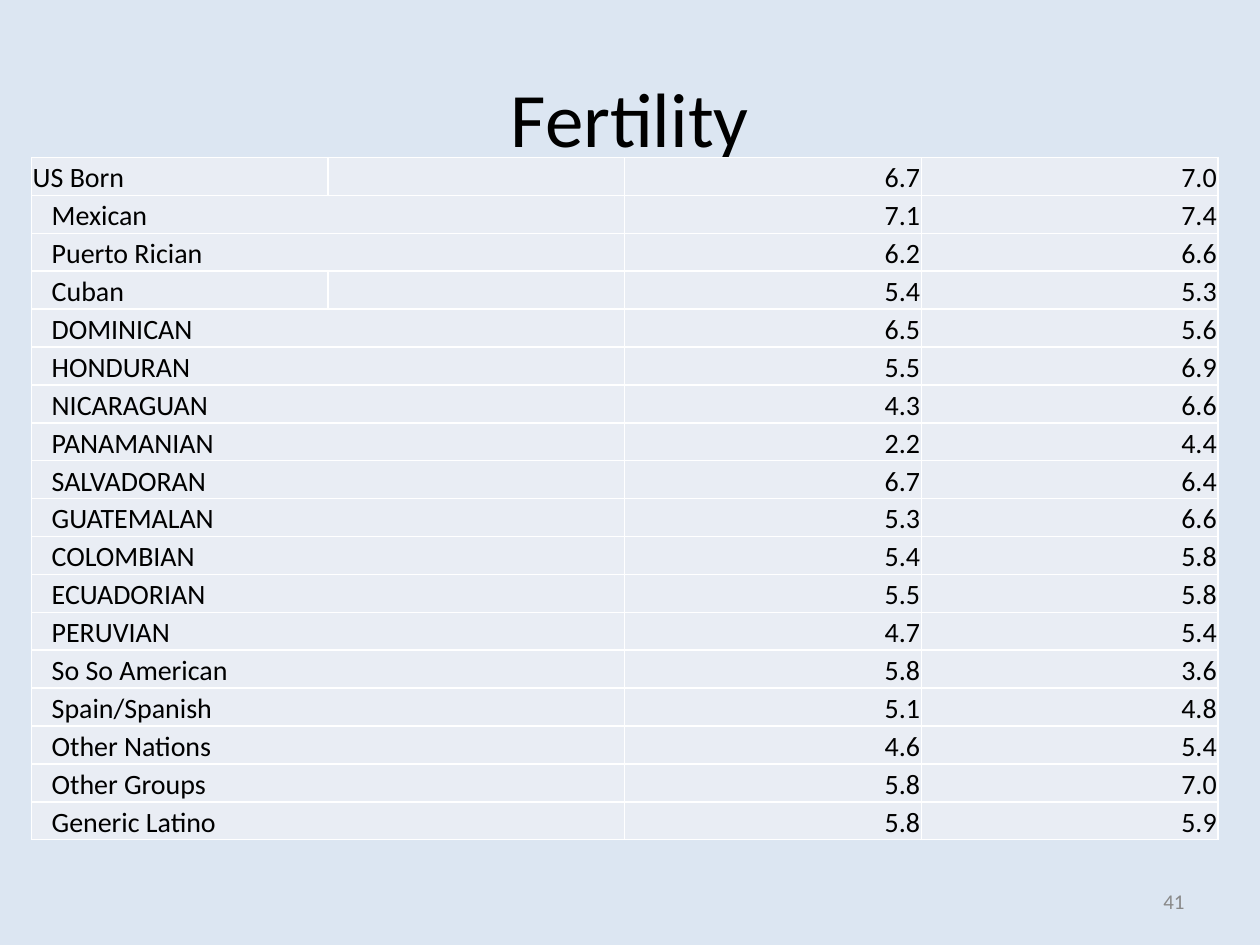
from lxml import etree
from pptx import Presentation
from pptx.dml.color import RGBColor
from pptx.enum import text
from pptx.oxml import ns
from pptx.util import Pt

TITLE = "Fertility"
PAGE = "41"
GROUPS = [
    ("US Born", "6.7", "7.0"),
    ("Mexican", "7.1", "7.4"),
    ("Puerto Rician", "6.2", "6.6"),
    ("Cuban", "5.4", "5.3"),
    ("DOMINICAN", "6.5", "5.6"),
    ("HONDURAN", "5.5", "6.9"),
    ("NICARAGUAN", "4.3", "6.6"),
    ("PANAMANIAN", "2.2", "4.4"),
    ("SALVADORAN", "6.7", "6.4"),
    ("GUATEMALAN", "5.3", "6.6"),
    ("COLOMBIAN", "5.4", "5.8"),
    ("ECUADORIAN", "5.5", "5.8"),
    ("PERUVIAN", "4.7", "5.4"),
    ("So So American", "5.8", "3.6"),
    ("Spain/Spanish", "5.1", "4.8"),
    ("Other Nations", "4.6", "5.4"),
    ("Other Groups", "5.8", "7.0"),
    ("Generic Latino", "5.8", "5.9"),
]
TOTAL = "US Born"
UNMERGED = {TOTAL, "Cuban"}
COLUMNS = 4
COLUMN_WIDTH, ROW_HEIGHT = 169.5, 21.67
INSET, INDENT = 0.72, 10.85
FONT, BODY_SIZE = "Calibri", 16
LEFT, CENTER, RIGHT = text.PP_ALIGN.LEFT, text.PP_ALIGN.CENTER, text.PP_ALIGN.RIGHT


def paint(color, value):
    color.rgb = RGBColor.from_string(value)


def fill(target, value):
    target.fill.solid()
    paint(target.fill.fore_color, value)


def write(frame, words, size, color, align):
    paragraph = frame.paragraphs[0]
    paragraph.alignment = align
    run = paragraph.add_run()
    run.text = words
    run.font.size = Pt(size)
    run.font.name = FONT
    paint(run.font.color, color)


def add_borders(cell, color, width):
    properties = cell._tc.get_or_add_tcPr()
    for position, side in enumerate(("a:lnL", "a:lnR", "a:lnT", "a:lnB")):
        line = etree.Element(ns.qn(side), w=str(Pt(width)))
        solid = etree.SubElement(line, ns.qn("a:solidFill"))
        etree.SubElement(solid, ns.qn("a:srgbClr"), val=color)
        properties.insert(position, line)


def fill_cell(cell, words, align, indent):
    fill(cell, "E9EDF4")
    add_borders(cell, "FFFFFF", 1)
    cell.vertical_anchor = text.MSO_ANCHOR.BOTTOM
    cell.margin_left = Pt(INSET + indent)
    cell.margin_right = cell.margin_top = Pt(INSET)
    cell.margin_bottom = Pt(0)
    if words:
        write(cell.text_frame, words, BODY_SIZE, "000000", align)
    else:
        etree.SubElement(cell.text_frame.paragraphs[0]._p,
                         ns.qn("a:endParaRPr"), sz=str(BODY_SIZE * 100))


def add_fertility_table(slide):
    table = slide.shapes.add_table(
        len(GROUPS), COLUMNS, Pt(18), Pt(90),
        Pt(COLUMN_WIDTH * COLUMNS), Pt(ROW_HEIGHT * len(GROUPS))).table
    table.first_row = table.horz_banding = False
    for column in table.columns:
        column.width = Pt(COLUMN_WIDTH)
    for row, (group, first, second) in enumerate(GROUPS):
        table.rows[row].height = Pt(ROW_HEIGHT)
        indent = 0 if group == TOTAL else INDENT
        for column, words in enumerate((group, "", first, second)):
            fill_cell(table.cell(row, column), words,
                      RIGHT if column > 1 else LEFT,
                      0 if column else indent)
        if group not in UNMERGED:
            table.cell(row, 0).merge(table.cell(row, 1))


def main():
    deck = Presentation()
    deck.slide_width, deck.slide_height = Pt(720), Pt(540)
    slide = deck.slides.add_slide(deck.slide_layouts[5])
    fill(slide.background, "DCE6F2")

    title = slide.shapes.title
    title.left, title.top, title.width, title.height = Pt(36), Pt(21.6), Pt(648), Pt(90)
    title.text_frame.vertical_anchor = text.MSO_ANCHOR.MIDDLE
    write(title.text_frame, TITLE, 44, "000000", CENTER)

    add_fertility_table(slide)

    page = slide.shapes.add_textbox(Pt(516), Pt(500.5), Pt(168), Pt(28.75)).text_frame
    page.word_wrap = True
    page.vertical_anchor = text.MSO_ANCHOR.MIDDLE
    write(page, PAGE, 12, "898989", RIGHT)

    deck.save("out.pptx")


if __name__ == "__main__":
    main()
